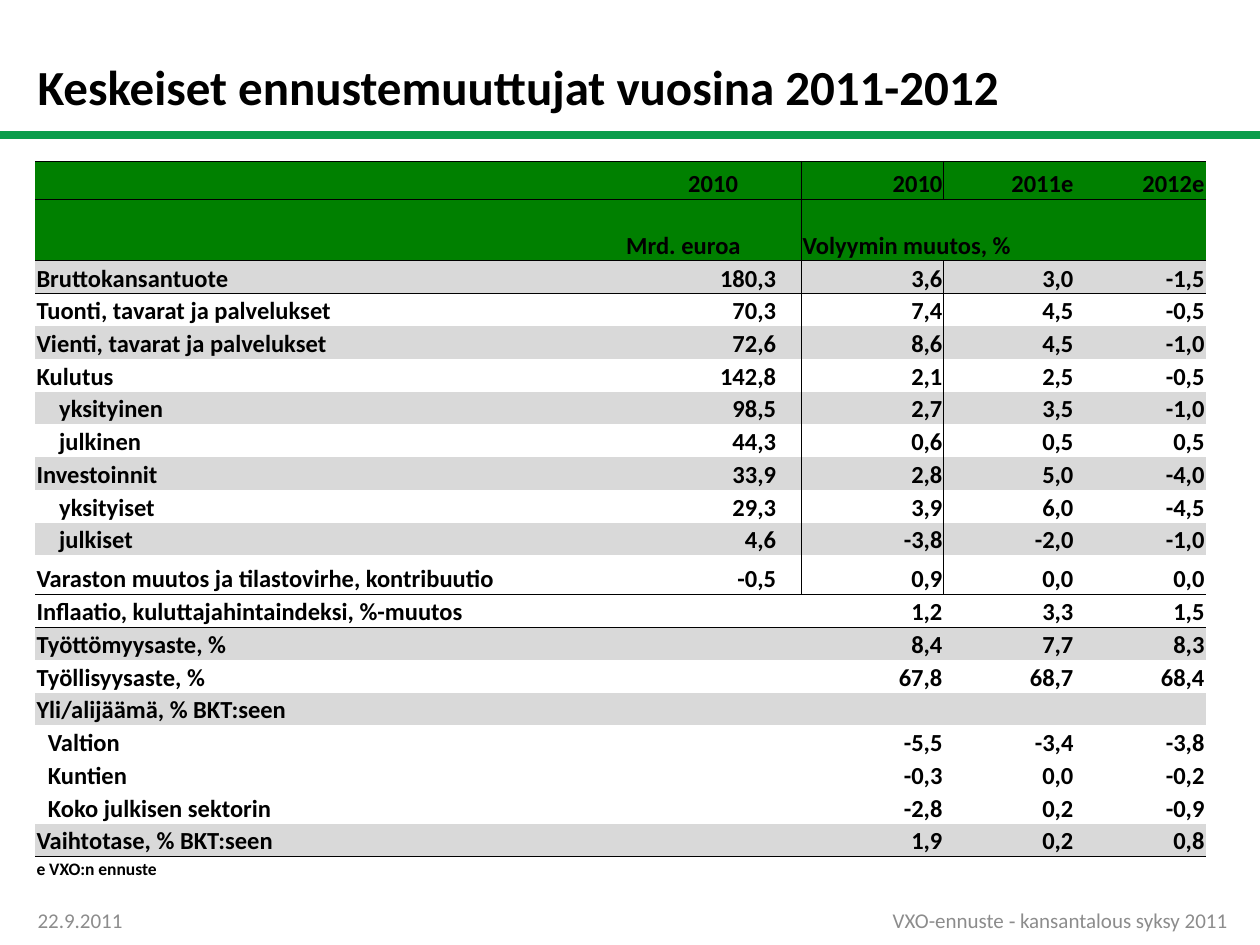
from dataclasses import dataclass

from lxml import etree
from pptx import Presentation
from pptx.dml.color import RGBColor
from pptx.enum.shapes import MSO_CONNECTOR
from pptx.enum.text import MSO_ANCHOR, PP_ALIGN
from pptx.oxml.ns import qn
from pptx.util import Inches, Pt

LEFT, CENTER, RIGHT = PP_ALIGN.LEFT, PP_ALIGN.CENTER, PP_ALIGN.RIGHT
MIDDLE, BOTTOM = MSO_ANCHOR.MIDDLE, MSO_ANCHOR.BOTTOM
STRAIGHT = MSO_CONNECTOR.STRAIGHT
NO_STYLE_NO_GRID = "{2D5ABB26-0587-4C30-8999-92F81FD0307C}"


@dataclass(frozen=True)
class Theme:
    font: str = "Calibri"
    ink: str = "000000"
    muted: str = "8C8C8C"
    rule: str = "0A9D4B"
    header: str = "008000"
    band: str = "D9D9D9"
    plain: str = "FFFFFF"
    title_size: int = 28
    table_size: int = 14
    footer_size: int = 12
    note_size: int = 10
    border_width: float = 0.5


THEME = Theme()


@dataclass(frozen=True)
class Caption:
    text: str
    box: tuple[float, float, float, float]
    size: int
    color: str
    bold: bool = False
    align: PP_ALIGN = LEFT


@dataclass(frozen=True)
class Row:
    cells: tuple[str, ...] = ("", "", "", "", "")
    fill: str | None = THEME.plain
    height: float = 0.26
    indent: float = 0
    size: int = THEME.table_size
    aligns: tuple[PP_ALIGN, ...] = (LEFT, RIGHT, RIGHT, RIGHT, RIGHT)
    amount_inset: float = 0.2


CAPTIONS = (
    Caption("Keskeiset ennustemuuttujat vuosina 2011-2012", (0.2, 0.3, 8.77, 0.77),
            THEME.title_size, THEME.ink, bold=True),
    Caption("VXO-ennuste ‑ kansantalous syksy 2011", (6.83, 7.1, 3.17, 0.4),
            THEME.footer_size, THEME.muted, align=CENTER),
    Caption("22.9.2011", (0.2, 7.1, 2.33, 0.4), THEME.footer_size, THEME.muted),
)

SUB, SECTOR = 0.18, 0.09
COLUMN_WIDTHS = (4.68, 1.4, 1.13, 1.04, 1.04)
ROWS = (
    Row(fill=None, height=0.36),
    Row(("", "2010", "2010", "2011e", "2012e"), THEME.header, 0.3,
        aligns=(LEFT, CENTER, RIGHT, RIGHT, RIGHT), amount_inset=0.01),
    Row(("", "Mrd. euroa", "Volyymin muutos, %", "", ""), THEME.header, 0.49,
        aligns=(LEFT,) * 5, amount_inset=0.01),
    Row(("Bruttokansantuote", "180,3", "3,6", "3,0", "-1,5"), THEME.band),
    Row(("Tuonti, tavarat ja palvelukset", "70,3", "7,4", "4,5", "-0,5")),
    Row(("Vienti, tavarat ja palvelukset", "72,6", "8,6", "4,5", "-1,0"), THEME.band),
    Row(("Kulutus", "142,8", "2,1", "2,5", "-0,5")),
    Row(("yksityinen", "98,5", "2,7", "3,5", "-1,0"), THEME.band, indent=SUB),
    Row(("julkinen", "44,3", "0,6", "0,5", "0,5"), indent=SUB),
    Row(("Investoinnit", "33,9", "2,8", "5,0", "-4,0"), THEME.band),
    Row(("yksityiset", "29,3", "3,9", "6,0", "-4,5"), indent=SUB),
    Row(("julkiset", "4,6", "-3,8", "-2,0", "-1,0"), THEME.band, indent=SUB),
    Row(("Varaston muutos ja tilastovirhe, kontribuutio", "-0,5", "0,9", "0,0", "0,0"),
        height=0.31),
    Row(("Inflaatio, kuluttajahintaindeksi, %-muutos", "", "1,2", "3,3", "1,5")),
    Row(("Työttömyysaste, %", "", "8,4", "7,7", "8,3"), THEME.band),
    Row(("Työllisyysaste, %", "", "67,8", "68,7", "68,4")),
    Row(("Yli/alijäämä, % BKT:seen", "", "", "", ""), THEME.band),
    Row(("Valtion", "", "-5,5", "-3,4", "-3,8"), indent=SECTOR),
    Row(("Kuntien", "", "-0,3", "0,0", "-0,2"), indent=SECTOR),
    Row(("Koko julkisen sektorin", "", "-2,8", "0,2", "-0,9"), indent=SECTOR),
    Row(("Vaihtotase, % BKT:seen", "", "1,9", "0,2", "0,8"), THEME.band),
    Row(("e VXO:n ennuste", "", "", "", ""), None, 0.19, size=THEME.note_size),
)
MERGES = (((0, 0), (0, 4)), ((2, 2), (2, 4)), ((13, 0), (13, 1)))
RULED_BELOW = {0, 2, 12, 20}
DIVIDED_ROWS = range(1, 13)


def set_all(target, values: dict) -> None:
    for name, value in values.items():
        setattr(target, name, value)


def add_run(paragraph, text: str, size: int, color: str, bold: bool) -> None:
    run = paragraph.add_run()
    run.text = text
    set_all(run.font, {"name": THEME.font, "size": Pt(size), "bold": bold})
    run.font.color.rgb = RGBColor.from_string(color)


def add_caption(slide, caption: Caption) -> None:
    frame = slide.shapes.add_textbox(*map(Inches, caption.box)).text_frame
    set_all(frame, {"word_wrap": True, "vertical_anchor": MIDDLE})
    paragraph = frame.paragraphs[0]
    paragraph.alignment = caption.align
    add_run(paragraph, caption.text, caption.size, caption.color, caption.bold)


def add_title_rule(slide) -> None:
    rule = slide.shapes.add_connector(STRAIGHT, 0, Inches(1.07), Inches(10), Inches(1.07))
    rule.line.color.rgb = RGBColor.from_string(THEME.rule)
    rule.line.width = Pt(4.5)
    etree.SubElement(rule._element.spPr, qn("a:effectLst"))


def add_borders(cell, row: int, column: int) -> None:
    """Draw the sides of a cell that lie on a ruled edge of the table."""
    divided = row in DIVIDED_ROWS
    sides = {
        "a:lnL": divided and column == 2,
        "a:lnR": divided and column == 1,
        "a:lnT": row - 1 in RULED_BELOW,
        "a:lnB": row in RULED_BELOW,
    }
    properties = cell._tc.get_or_add_tcPr()
    for tag, ruled in sides.items():
        if ruled:
            line = etree.SubElement(properties, qn(tag), w=str(Pt(THEME.border_width)))
            fill = etree.SubElement(line, qn("a:solidFill"))
            etree.SubElement(fill, qn("a:srgbClr"), val=THEME.ink)


def fill_cell(cell, row: Row, column: int) -> None:
    set_all(cell, {
        "vertical_anchor": BOTTOM,
        "margin_left": Inches(0.01 + (row.indent if column == 0 else 0)),
        "margin_top": Inches(0.01),
        "margin_right": Inches(row.amount_inset if column == 1 else 0.01),
        "margin_bottom": 0,
    })
    if row.fill:
        cell.fill.solid()
        cell.fill.fore_color.rgb = RGBColor.from_string(row.fill)
    else:
        cell.fill.background()
    paragraph = cell.text_frame.paragraphs[0]
    paragraph.alignment = row.aligns[column]
    if row.cells[column]:
        add_run(paragraph, row.cells[column], row.size, THEME.ink, True)
    else:
        # Keeps an empty cell from stretching its row
        etree.SubElement(paragraph._p, qn("a:endParaRPr"), sz=str(row.size * 100))


def add_forecast_table(slide) -> None:
    height = sum(row.height for row in ROWS)
    table = slide.shapes.add_table(
        len(ROWS), len(COLUMN_WIDTHS), Inches(0.28), Inches(0.92),
        Inches(sum(COLUMN_WIDTHS)), Inches(height)).table
    set_all(table, {"first_row": False, "horz_banding": False})
    table._tbl.tblPr.find(qn("a:tableStyleId")).text = NO_STYLE_NO_GRID
    for column, width in enumerate(COLUMN_WIDTHS):
        table.columns[column].width = Inches(width)
    for index, row in enumerate(ROWS):
        table.rows[index].height = Inches(row.height)
        for column in range(len(COLUMN_WIDTHS)):
            cell = table.cell(index, column)
            add_borders(cell, index, column)
            fill_cell(cell, row, column)
    for first, last in MERGES:
        table.cell(*first).merge(table.cell(*last))


def main() -> None:
    deck = Presentation()
    set_all(deck, {"slide_width": Inches(10), "slide_height": Inches(7.5)})
    slide = deck.slides.add_slide(deck.slide_layouts[6])
    add_title_rule(slide)
    for caption in CAPTIONS:
        add_caption(slide, caption)
    add_forecast_table(slide)
    deck.save("out.pptx")


if __name__ == "__main__":
    main()
